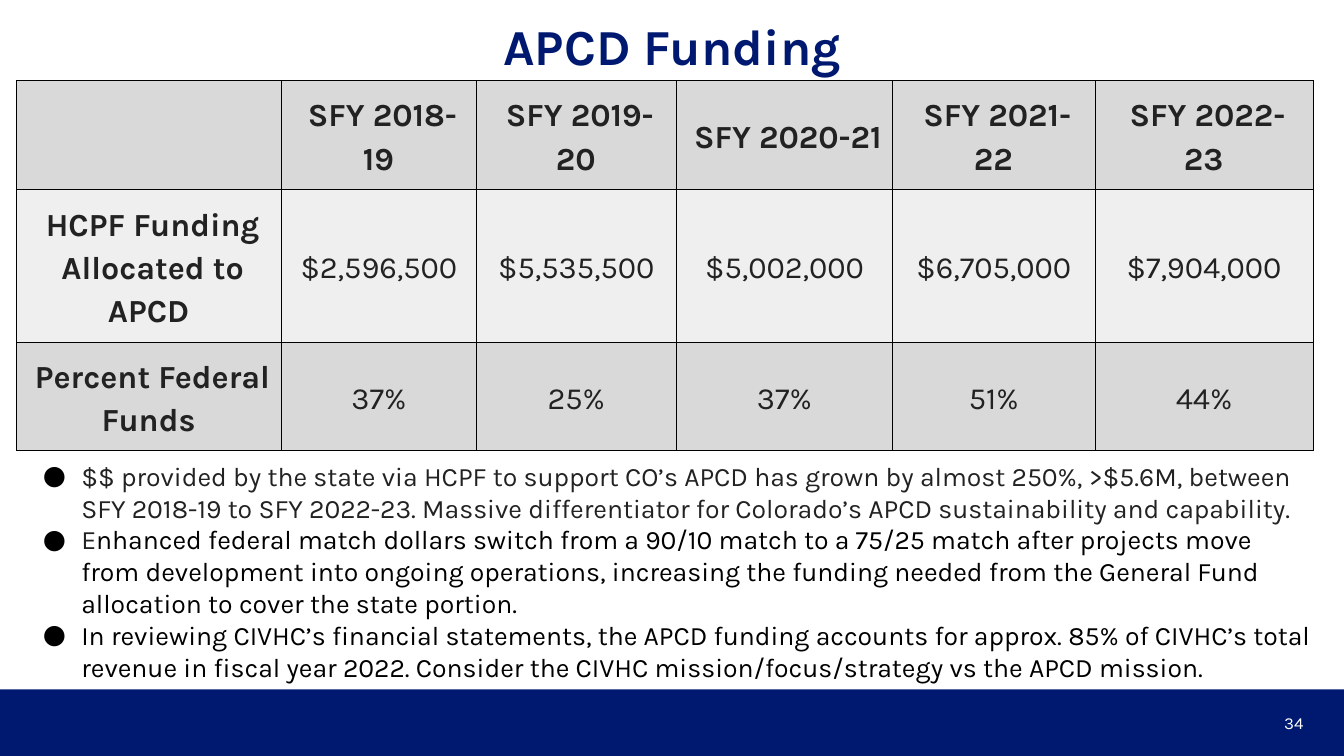
from lxml import etree
from pptx import Presentation
from pptx.dml.color import RGBColor
from pptx.enum import shapes, text
from pptx.oxml.ns import qn
from pptx.util import Cm, Pt

# Content
TITLE = "APCD Funding"
PAGE = "34"
FUNDING = [
    ["", "SFY 2018-19", "SFY 2019-20", "SFY 2020-21", "SFY 2021-22", "SFY 2022-23"],
    ["HCPF Funding Allocated to APCD", "$2,596,500", "$5,535,500", "$5,002,000",
     "$6,705,000", "$7,904,000"],
    ["Percent Federal Funds", "37%", "25%", "37%", "51%", "44%"],
]
# Each point is a list of (wording, colour) runs
POINTS = [
    [("$$ provided by the state via HCPF to support CO’s APCD has grown by almost 250%, "
      ">$5.6M, between SFY 2018-19 to SFY 2022-23. Massive differentiator for Colorado’s "
      "APCD sustainability and capability.", "ink")],
    [("E", "ink"),
     ("nhanced federal match dollars switch from a 90/10 match to a 75/25 match after "
      "projects move from development into ongoing operations, increasing the funding "
      "needed from the General Fund allocation to cover the state portion.", "black")],
    [("In reviewing CIVHC’s financial statements, the APCD funding accounts for approx. 85% "
      "of CIVHC’s total revenue in fiscal year 2022. Consider the CIVHC "
      "mission/focus/strategy vs the APCD mission.", "black")],
]

THEME = {
    "font": "Karla",
    "color": {"navy": "001970", "white": "FFFFFF", "ink": "222222", "black": "000000",
              "band": "D9D9D9", "pale": "EFEFEF"},
    "size": {"title": 36, "heading": 23, "figure": 22, "point": 19, "page": 12},
}
COLUMNS = [6.68, 4.9, 5.05, 5.44, 5.11, 5.49]
ROWS = [2.67, 3.78, 2.67]
PAD = Cm(0.25)
WIDTH, HEIGHT = Cm(33.87), Cm(19.05)


def rgb(name):
    return RGBColor.from_string(THEME["color"][name])


def apply(target, **values):
    for key, value in values.items():
        setattr(target, key, value)


def add_run(paragraph, wording, size, color, bold=False):
    run = paragraph.add_run()
    run.text = wording
    apply(run.font, name=THEME["font"], size=Pt(THEME["size"][size]), bold=bold)
    run.font.color.rgb = rgb(color)


def add_box(left, top, width, height, **frame_format):
    box = slide.shapes.add_textbox(Cm(left), Cm(top), Cm(width), Cm(height))
    apply(box.text_frame, word_wrap=True, **frame_format)
    return box.text_frame


def indent(paragraph, left, first=0):
    properties = paragraph._p.get_or_add_pPr()
    properties.set("marL", str(Cm(left)))
    properties.set("indent", str(Cm(first)))
    return properties


def add_bullet(paragraph):
    properties = indent(paragraph, 1.27, -0.97)
    color = etree.SubElement(properties, qn("a:buClr"))
    etree.SubElement(color, qn("a:srgbClr"), val=THEME["color"]["black"])
    etree.SubElement(properties, qn("a:buFont"), typeface=THEME["font"])
    etree.SubElement(properties, qn("a:buChar"), char="●")


def add_borders(cell):
    properties = cell._tc.get_or_add_tcPr()
    for side in ("lnL", "lnR", "lnT", "lnB"):
        line = etree.SubElement(properties, qn(f"a:{side}"), w=str(Pt(0.75)))
        fill = etree.SubElement(line, qn("a:solidFill"))
        etree.SubElement(fill, qn("a:srgbClr"), val=THEME["color"]["black"])


presentation = Presentation()
apply(presentation, slide_width=WIDTH, slide_height=HEIGHT)
slide = presentation.slides.add_slide(presentation.slide_layouts[6])

# Footer band
footer_top = Cm(17.37)
footer = slide.shapes.add_shape(shapes.MSO_SHAPE.RECTANGLE, 0, footer_top,
                                WIDTH, HEIGHT - footer_top)
footer.shadow.inherit = False
footer.fill.solid()
footer.fill.fore_color.rgb = rgb("navy")
footer.line.fill.background()

# Title and page number
title = add_box(2.34, 0.25, 29.2, 2, vertical_anchor=text.MSO_ANCHOR.MIDDLE).paragraphs[0]
apply(title, alignment=text.PP_ALIGN.CENTER, line_spacing=0.9)
add_run(title, TITLE, "title", "navy", bold=True)

page = add_box(25.48, 17.7, 7.62, 1.02, vertical_anchor=text.MSO_ANCHOR.MIDDLE).paragraphs[0]
page.alignment = text.PP_ALIGN.RIGHT
add_run(page, PAGE, "page", "white")

# Funding table
funding = slide.shapes.add_table(len(ROWS), len(COLUMNS), Cm(0.42), Cm(2.03),
                                 Cm(sum(COLUMNS)), Cm(sum(ROWS))).table
for column, width in zip(funding.columns, COLUMNS):
    column.width = Cm(width)
for row, height in zip(funding.rows, ROWS):
    row.height = Cm(height)

for r, entries in enumerate(FUNDING):
    for c, entry in enumerate(entries):
        cell = funding.cell(r, c)
        add_borders(cell)
        cell.fill.solid()
        cell.fill.fore_color.rgb = rgb("pale" if r % 2 else "band")
        apply(cell, vertical_anchor=text.MSO_ANCHOR.MIDDLE, margin_left=PAD,
              margin_right=PAD, margin_top=PAD, margin_bottom=PAD)
        if entry:
            paragraph = cell.text_frame.paragraphs[0]
            apply(paragraph, alignment=text.PP_ALIGN.CENTER, line_spacing=1.15)
            indent(paragraph, 0.18)
            heading = r == 0 or c == 0
            add_run(paragraph, entry + " ", "heading" if heading else "figure", "ink", heading)

# Points under the table
points = add_box(0.53, 11.33, 32.82, 6.2, margin_left=PAD, margin_right=PAD,
                 margin_top=PAD, margin_bottom=PAD,
                 auto_size=text.MSO_AUTO_SIZE.SHAPE_TO_FIT_TEXT)
for i, runs in enumerate(POINTS):
    paragraph = points.add_paragraph() if i else points.paragraphs[0]
    add_bullet(paragraph)
    for wording, color in runs:
        add_run(paragraph, wording, "point", color)

presentation.save("out.pptx")
